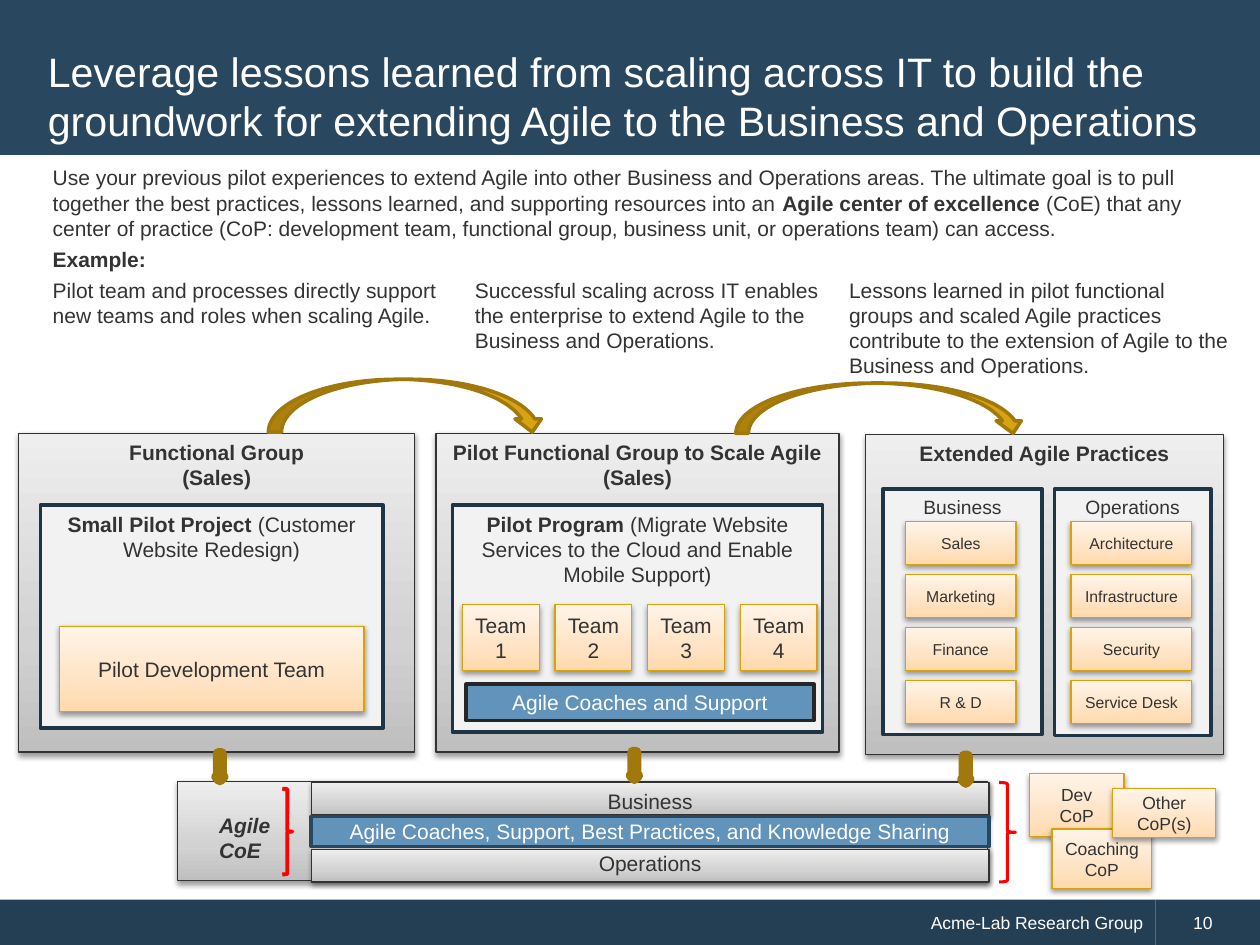
import pptx
import pptx.util
import pptx.oxml
import pptx.dml.color
from pptx.enum.shapes import MSO_SHAPE
from pptx.enum.text import MSO_ANCHOR, MSO_AUTO_SIZE, PP_ALIGN
from pptx.util import Inches

COLORS = {
    "header": "29475F", "footer": "243F54", "text": "333333", "white": "FFFFFF",
    "panel_line": "323232", "frame": "F2F2F2", "frame_line": "1E3546",
    "card_line": "D9A10B", "blue": "6294BB", "dark": "262626",
    "arrow": "D9A210", "arrow_line": "A1780C", "brace": "FF0000",
}
GRADIENTS = {  # colours at 0, 35 and 100 %, bottom to top
    "panel": ("BFBFBF", "D2D2D2", "EEEEEE"),
    "card": ("FFD9AB", "FFE3C4", "FFF4E8"),
}
NS = 'xmlns:a="http://schemas.openxmlformats.org/drawingml/2006/main"'
TOP, MIDDLE, BOTTOM = MSO_ANCHOR.TOP, MSO_ANCHOR.MIDDLE, MSO_ANCHOR.BOTTOM
RGB = pptx.dml.color.RGBColor.from_string


def write(sp, text, size, color="text", align=PP_ALIGN.CENTER, anchor=TOP,
          margin=0.1, italic=False):
    """Fill a shape with text; ** switches bold on and off."""
    tf = sp.text_frame
    tf.word_wrap = True
    tf.auto_size = MSO_AUTO_SIZE.NONE
    tf.vertical_anchor = anchor
    tf.margin_left = tf.margin_right = Inches(margin)
    for i, line in enumerate(text.split("\n")):
        p = tf.paragraphs[0] if i == 0 else tf.add_paragraph()
        p.alignment = align
        p.font.name, p.font.size = "Arial", pptx.util.Pt(size)
        p.font.italic = italic
        p.font.color.rgb = RGB(COLORS[color])
        for j, part in enumerate(line.split("**")):
            if part:
                r = p.add_run()
                r.text = part
                if j % 2:
                    r.font.bold = True


def add_box(x, y, w, h, fill=None, line=None, weight=0.75, kind=MSO_SHAPE.RECTANGLE):
    """Add a shape; gradient fills also get a soft shadow."""
    sp = s.shapes.add_shape(kind, Inches(x), Inches(y), Inches(w), Inches(h))
    sp.shadow.inherit = False
    if fill in GRADIENTS:
        stops = "".join(f'<a:gs pos="{pos}"><a:srgbClr val="{c}"/></a:gs>'
                        for pos, c in zip((0, 35000, 100000), GRADIENTS[fill]))
        spPr = sp._element.spPr
        spPr.insert(2, pptx.oxml.parse_xml(
            f'<a:gradFill {NS} rotWithShape="1"><a:gsLst>{stops}</a:gsLst>'
            '<a:lin ang="16200000" scaled="0"/></a:gradFill>'))
        spPr[-1].append(pptx.oxml.parse_xml(
            f'<a:outerShdw {NS} blurRad="40000" dist="20000" dir="5400000" rotWithShape="0">'
            '<a:srgbClr val="000000"><a:alpha val="38000"/></a:srgbClr></a:outerShdw>'))
    elif fill:
        sp.fill.solid()
        sp.fill.fore_color.rgb = RGB(COLORS[fill])
    else:
        sp.fill.background()
    if line:
        sp.line.color.rgb = RGB(COLORS[line])
        sp.line.width = pptx.util.Pt(weight)
    else:
        sp.line.fill.background()
    return sp


prs = pptx.Presentation()
prs.slide_width, prs.slide_height = Inches(10), Inches(7.5)
s = prs.slides.add_slide(prs.slide_layouts[5])

# Header band and title
band = add_box(0, 0, 10, 1.23, "header")
title = s.shapes.title
band._element.addnext(title._element)
title.left, title.top = Inches(0.28), Inches(0.28)
title.width, title.height = Inches(9.43), Inches(0.96)
write(title, "Leverage lessons learned from scaling across IT to build the groundwork "
      "for extending Agile to the Business and Operations",
      23.5, "white", PP_ALIGN.LEFT, MIDDLE)

# Footer band
write(add_box(0, 7.14, 9.17, 0.37, "footer"), "Acme-Lab Research Group", 10, "white",
      PP_ALIGN.RIGHT, MIDDLE)
write(add_box(9.17, 7.14, 0.83, 0.37, "footer"), "10", 10, "white",
      PP_ALIGN.LEFT, MIDDLE, margin=0.3)

# Introduction and the three column notes
for x, y, w, h, text in [
    (0.32, 1.26, 9.39, 0.71,
     "Use your previous pilot experiences to extend Agile into other Business and Operations "
     "areas. The ultimate goal is to pull together the best practices, lessons learned, and "
     "supporting resources into an **Agile center of excellence** (CoE) that any center of "
     "practice (CoP: development team, functional group, business unit, or operations team) "
     "can access."),
    (0.32, 1.91, 1.14, 0.3, "**Example:**"),
    (0.32, 2.15, 3.25, 0.5, "Pilot team and processes directly support new teams and roles "
     "when scaling Agile."),
    (3.67, 2.15, 3.13, 0.71, "Successful scaling across IT enables the enterprise to extend "
     "Agile to the Business and Operations."),
    (6.64, 2.15, 3.25, 0.91, "Lessons learned in pilot functional groups and scaled Agile "
     "practices contribute to the extension of Agile to the Business and Operations."),
]:
    tb = s.shapes.add_textbox(Inches(x), Inches(y), Inches(w), Inches(h))
    write(tb, text, 12, align=PP_ALIGN.LEFT)

# Panels
for x, y, w, h, text in [
    (0.15, 3.44, 3.14, 2.53, "**Functional Group**\n**(Sales)**"),
    (3.46, 3.44, 3.2, 2.53, "**Pilot Functional Group to Scale Agile**\n**(Sales)**"),
    (6.87, 3.45, 2.84, 2.54, "**Extended Agile Practices**"),
]:
    write(add_box(x, y, w, h, "panel", "panel_line"), text, 12)

# Frames inside the panels
for x, y, w, h, size, text in [
    (0.32, 4.01, 2.72, 1.77, 12, "**Small Pilot Project** (Customer Website Redesign)"),
    (3.59, 4.01, 2.94, 1.8, 12,
     "**Pilot Program** (Migrate Website Services to the Cloud and Enable Mobile Support)"),
    (7.01, 3.88, 1.26, 1.95, 11, "Business"),
    (8.37, 3.88, 1.24, 1.96, 11, "Operations"),
]:
    write(add_box(x, y, w, h, "frame", "frame_line", 2), text, size)

# Cards: teams, departments and centers of practice
cards = [(0.47, 4.97, 2.42, 0.68, 12, "Pilot Development Team")]
cards += [(3.67 + 0.735 * i, 4.8, 0.61, 0.52, 12, f"Team {i + 1}") for i in range(4)]
for x, w, names in [
    (7.185, 0.88, ("Sales", "Marketing", "Finance", "R & D")),
    (8.5, 0.96, ("Architecture", "Infrastructure", "Security", "Service Desk")),
]:
    cards += [(x, 4.14 + 0.42 * i, w, 0.34, 9, name) for i, name in enumerate(names)]
cards += [
    (8.17, 6.14, 0.75, 0.5, 10, "Dev\nCoP"),
    (8.35, 6.58, 0.79, 0.47, 10, "Coaching\nCoP"),
    (8.83, 6.26, 0.82, 0.39, 10, "Other\nCoP(s)"),
]
for x, y, w, h, size, text in cards:
    write(add_box(x, y, w, h, "card", "card_line"), text, size, anchor=MIDDLE, margin=0.05)
write(add_box(3.7, 5.43, 2.76, 0.29, "blue", "dark", 2), "Agile Coaches and Support",
      12, "white", anchor=MIDDLE)

# Agile center of excellence
add_box(1.41, 6.2, 6.43, 0.79, "panel", "panel_line")
for y, text, anchor in [(6.21, "Business", TOP), (6.74, "Operations", BOTTOM)]:
    write(add_box(2.47, y, 5.38, 0.26, "panel", "panel_line"), text, 12, anchor=anchor)
write(add_box(2.47, 6.48, 5.38, 0.24, "blue", "header", 2),
      "Agile Coaches, Support, Best Practices, and Knowledge Sharing",
      12, "white", anchor=MIDDLE)
tb = s.shapes.add_textbox(Inches(1.64), Inches(6.4), Inches(0.83), Inches(0.5))
write(tb, "**Agile CoE**", 12, align=PP_ALIGN.LEFT, italic=True)

# Braces
add_box(2.24, 6.26, 0.08, 0.68, None, "brace", 2.25, MSO_SHAPE.RIGHT_BRACE)
add_box(7.93, 6.21, 0.13, 0.79, None, "brace", 1.75, MSO_SHAPE.RIGHT_BRACE)

# Arrows between the panels and down to the center of excellence
for x, y, w, h in [(2.13, 3.01, 2.2, 0.42), (5.84, 3.04, 2.3, 0.4)]:
    add_box(x, y, w, h, "arrow", "arrow_line", 2, MSO_SHAPE.CURVED_DOWN_ARROW)
for x, y in [(1.72, 5.98), (5.01, 5.97), (7.64, 6)]:
    add_box(x, y, 0.05, 0.21, "arrow", "arrow_line", 6.25, MSO_SHAPE.DOWN_ARROW)

prs.save("out.pptx")
